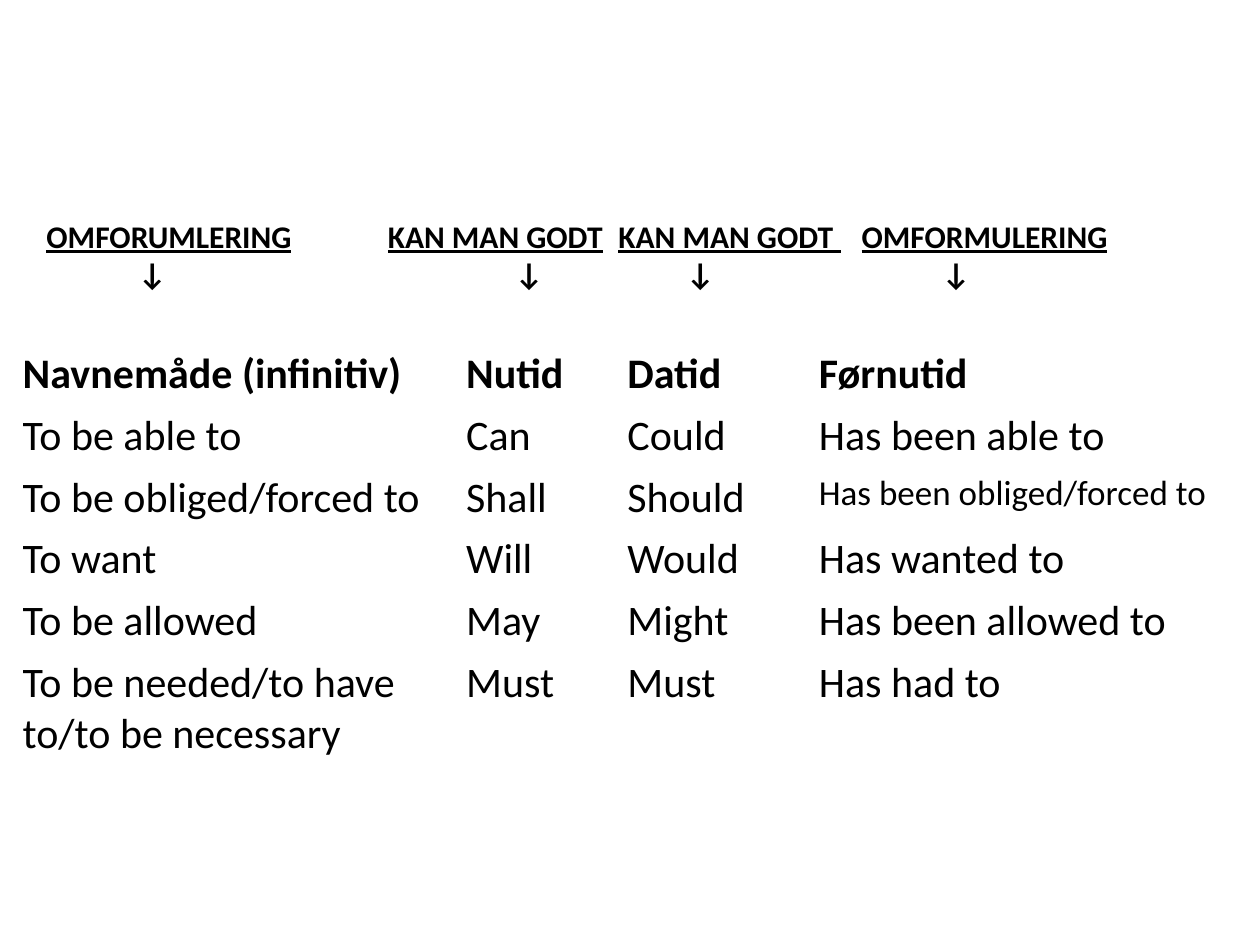
from lxml import etree
from pptx import Presentation, util as u
from pptx.dml.color import RGBColor
from pptx.oxml.ns import qn

HINTS = ["OMFORUMLERING", "KAN MAN GODT", "KAN MAN GODT ", "OMFORMULERING"]
HINT_STOPS = [0.29, 3, 4.83, 6.76]
ARROW_STOPS = [1.13, 4.12, 5.48, 7.51]
VERBS = [
    ("Navnemåde (infinitiv)", "Nutid", "Datid", "Førnutid"),
    ("To be able to", "Can", "Could", "Has been able to"),
    ("To be obliged/forced to", "Shall", "Should", "Has been obliged/forced to"),
    ("To want", "Will", "Would", "Has wanted to"),
    ("To be allowed", "May", "Might", "Has been allowed to"),
    ("To be needed/to have to/to be necessary", "Must", "Must", "Has had to"),
]
SMALLER = {"Has been obliged/forced to": 20}
COLUMN_WIDTHS = [3.52, 1.28, 1.52, 3.28]
ROW_HEIGHTS = [0.49] * 5 + [0.85]


def write(paragraph, words, size=24, bold=False, underline=False, color="000000"):
    run = paragraph.add_run()
    run.text = words
    font = run.font
    font.name, font.size = "Calibri", u.Pt(size)
    font.bold, font.underline = bold, underline
    font.color.rgb = RGBColor.from_string(color)


def write_at_stops(paragraph, labels, stops, align, underline):
    tabs = etree.SubElement(paragraph._p.get_or_add_pPr(), qn("a:tabLst"))
    for label, stop in zip(labels, stops):
        etree.SubElement(tabs, qn("a:tab"), pos=str(u.Inches(stop)), algn=align)
        write(paragraph, "\t", size=18, bold=True)
        write(paragraph, label, size=18, bold=True, underline=underline)


def add_hints(slide):
    box = slide.shapes.add_textbox(*map(u.Inches, (-0.02, 1.67, 9.88, 0.71)))
    frame = box.text_frame
    frame.word_wrap = True
    write_at_stops(frame.paragraphs[0], HINTS, HINT_STOPS, "l", True)
    write_at_stops(frame.add_paragraph(), "↓" * len(HINTS), ARROW_STOPS, "ctr", False)


def add_verbs(slide):
    table = slide.shapes.add_table(
        len(VERBS), len(COLUMN_WIDTHS), u.Inches(0.14), u.Inches(2.73),
        u.Inches(sum(COLUMN_WIDTHS)), u.Inches(sum(ROW_HEIGHTS))).table
    table.first_row = table.horz_banding = False
    for column, width in zip(table.columns, COLUMN_WIDTHS):
        column.width = u.Inches(width)
    for r, (row, height, verbs) in enumerate(zip(table.rows, ROW_HEIGHTS, VERBS)):
        row.height = u.Inches(height)
        for cell, verb in zip(row.cells, verbs):
            cell.fill.background()
            cell.margin_left = cell.margin_right = u.Inches(0.04)
            cell.margin_top = cell.margin_bottom = u.Inches(0.04)
            write(cell.text_frame.paragraphs[0], verb, size=SMALLER.get(verb, 24), bold=r == 0)


def main():
    """Build the slide of English modal verbs and their paraphrases."""
    deck = Presentation()
    deck.slide_width, deck.slide_height = u.Inches(10), u.Inches(7.5)
    slide = deck.slides.add_slide(deck.slide_layouts[6])
    add_verbs(slide)
    add_hints(slide)
    deck.save("out.pptx")


if __name__ == "__main__":
    main()
